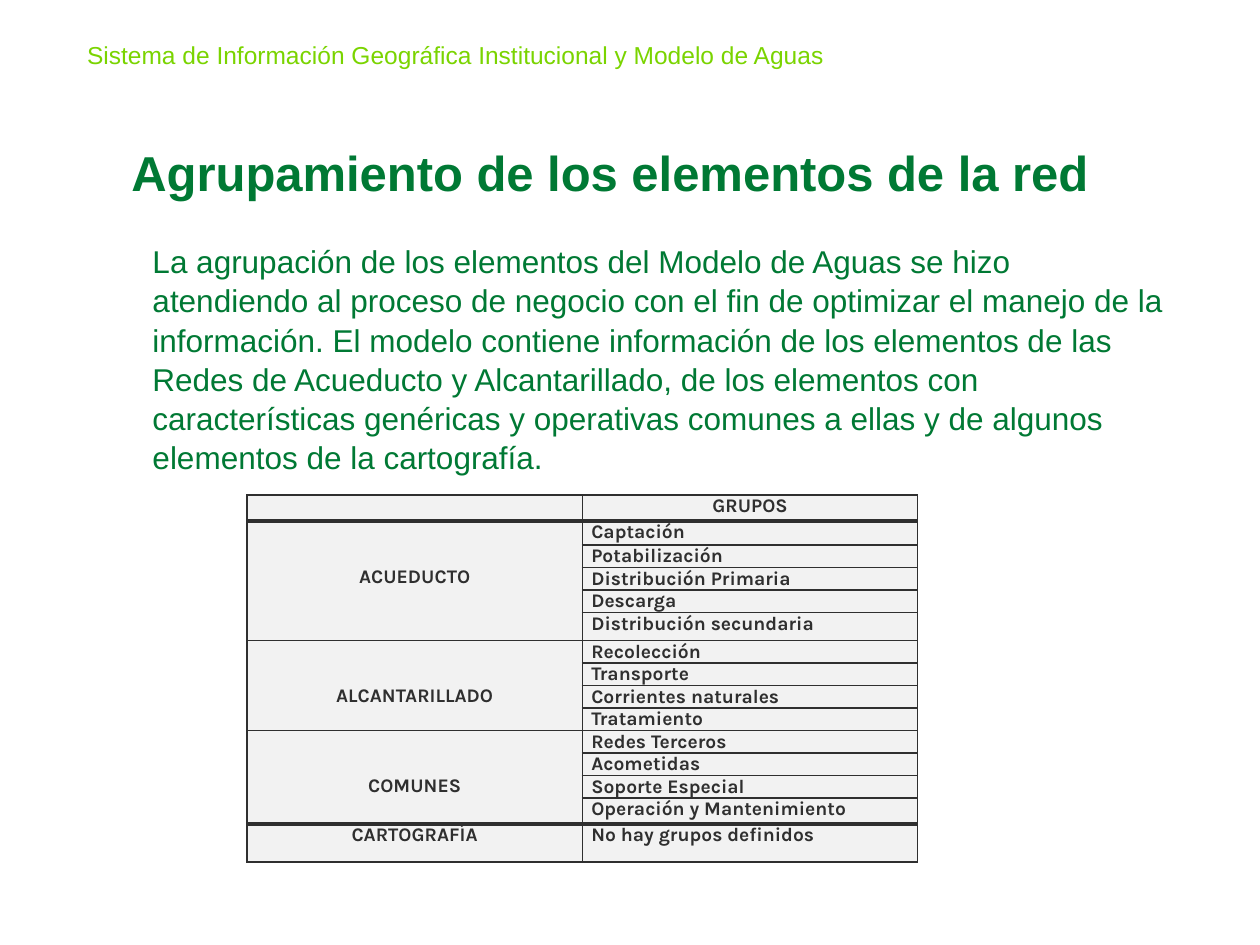
from lxml.etree import SubElement
from pptx import Presentation
from pptx.dml.color import RGBColor
from pptx.enum.text import MSO_ANCHOR as Anchor, MSO_AUTO_SIZE as AutoSize, PP_ALIGN as Align
from pptx.oxml.ns import qn
from pptx.util import Cm, Pt

# Content
SECTION = "Sistema de Información Geográfica Institucional y Modelo de Aguas"
HEADING = "Agrupamiento de los elementos de la red"
EXPLANATION = (
    "La agrupación de los elementos del Modelo de Aguas se hizo atendiendo al "
    "proceso de negocio con el fin de optimizar el manejo de la información. "
    "El modelo contiene información de los elementos de las Redes de Acueducto "
    "y Alcantarillado, de los elementos con características genéricas y "
    "operativas comunes a ellas y de algunos elementos de la cartografía."
)
GROUPS = [
    ("", ["GRUPOS"]),
    ("ACUEDUCTO", ["Captación", "Potabilización", "Distribución Primaria",
                   "Descarga", "Distribución secundaria"]),
    ("ALCANTARILLADO", ["Recolección", "Transporte", "Corrientes naturales",
                        "Tratamiento"]),
    ("COMUNES", ["Redes Terceros", "Acometidas", "Soporte Especial",
                 "Operación y Mantenimiento"]),
    ("CARTOGRAFÍA", ["No hay grupos definidos"]),
]

# Style
GREEN = RGBColor(0x00, 0x79, 0x34)
LIME = RGBColor(0x7A, 0xD4, 0x00)
INK = RGBColor(0x2F, 0x2F, 0x2F)
PALE = RGBColor(0xF2, 0xF2, 0xF2)
THIN, THICK = Pt(1), Pt(3)
COLUMN_WIDTH = 6.76
ROW_HEIGHT = 0.45
SPECIAL_HEIGHTS = {0: 0.52, 1: 0.49, 5: 0.56, 13: 0.52, 14: 0.77}


def style_font(paragraph, name, size, color, bold):
    font = paragraph.font
    font.name, font.size, font.bold = name, Pt(size), bold
    font.color.rgb = color


def fill_placeholder(holder, text, box, size, color, bold=False,
                     align=Align.LEFT, anchor=Anchor.BOTTOM):
    holder.left, holder.top, holder.width, holder.height = map(Cm, box)
    frame = holder.text_frame
    frame.text = text
    frame.word_wrap = True
    frame.auto_size = AutoSize.NONE
    frame.vertical_anchor = anchor
    paragraph = frame.paragraphs[0]
    paragraph.alignment = align
    paragraph.space_before = Pt(0)
    properties = paragraph._p.get_or_add_pPr()
    properties.set("marL", "0")
    properties.set("indent", "0")
    SubElement(properties, qn("a:buNone"))
    style_font(paragraph, "Arial", size, color, bold)
    return paragraph


def style_cell(cell, top, bottom):
    properties = cell._tc.get_or_add_tcPr()
    for side, width in (("L", THIN), ("R", THIN), ("T", top), ("B", bottom)):
        line = SubElement(properties, qn(f"a:ln{side}"), w=str(width))
        SubElement(SubElement(line, qn("a:solidFill")), qn("a:srgbClr"), val=str(INK))
    cell.fill.solid()
    cell.fill.fore_color.rgb = PALE
    cell.margin_left = cell.margin_right = Cm(0.18)
    cell.margin_top = cell.margin_bottom = 0


def write_cell(cell, text, align):
    cell.text = text
    paragraph = cell.text_frame.paragraphs[0]
    paragraph.alignment = align
    style_font(paragraph, "Karla", 11, INK, True)
    if not text:  # keeps the empty cell as low as its row
        SubElement(paragraph._p, qn("a:endParaRPr"), sz="1100")


presentation = Presentation()
presentation.slide_width, presentation.slide_height = Cm(25.4), Cm(19.05)
slide = presentation.slides.add_slide(presentation.slide_layouts[3])
heading, explanation, section = slide.placeholders

# Headings and explanation
fill_placeholder(section, SECTION, (1.5, 0.74, 21.59, 0.79), 14, LIME)
fill_placeholder(heading, HEADING, (1.5, 2.51, 21.59, 1.68), 28, GREEN,
                 bold=True, align=Align.CENTER)
body = fill_placeholder(explanation, EXPLANATION, (2.82, 4.72, 20.88, 13),
                        18, GREEN, anchor=Anchor.TOP)
body.line_spacing = 1.04

# Table of groups
row_count = sum(len(members) for _, members in GROUPS)
heights = [SPECIAL_HEIGHTS.get(row, ROW_HEIGHT) for row in range(row_count)]
table = slide.shapes.add_table(row_count, 2, Cm(4.98), Cm(9.98),
                               Cm(2 * COLUMN_WIDTH), Cm(sum(heights))).table
table.first_row = table.horz_banding = False
for column in table.columns:
    column.width = Cm(COLUMN_WIDTH)

last = row_count - 1
for row, height in enumerate(heights):
    table.rows[row].height = Cm(height)
    for column in range(2):
        style_cell(table.cell(row, column),
                   top=THICK if row in (1, last) else THIN,
                   bottom=THICK if row in (0, last - 1) else THIN)

first = 0
for group, members in GROUPS:
    group_cell = table.cell(first, 0)
    if len(members) > 1:
        group_cell.merge(table.cell(first + len(members) - 1, 0))
        group_cell.margin_top = Cm(2 * ROW_HEIGHT)  # name sits on the third line
    write_cell(group_cell, group, Align.CENTER)
    for row, member in enumerate(members, first):
        write_cell(table.cell(row, 1), member, Align.LEFT if row else Align.CENTER)
    first += len(members)

presentation.save("out.pptx")
